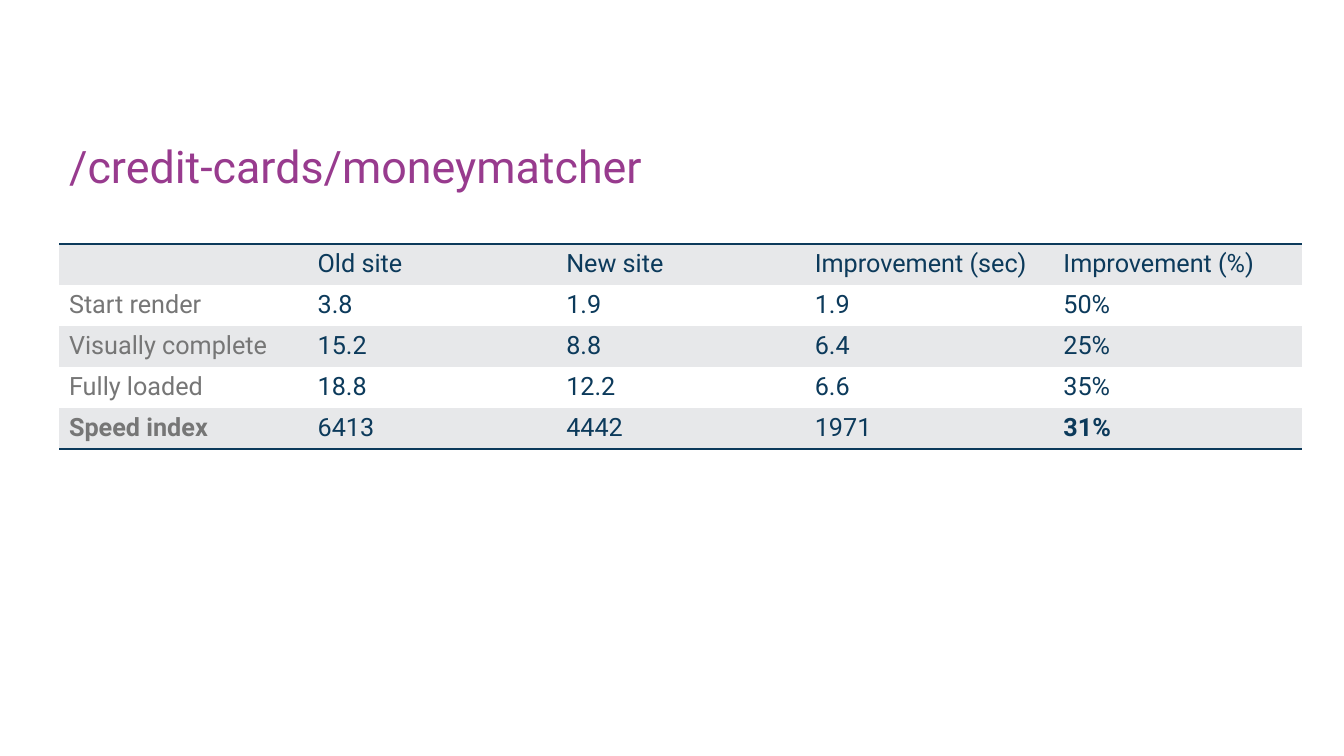
from dataclasses import dataclass

from lxml.etree import SubElement
from pptx import Presentation
from pptx.dml.color import RGBColor as Color
from pptx.enum.text import MSO_ANCHOR as Anchor, PP_ALIGN as Align
from pptx.oxml import parse_xml
from pptx.oxml.ns import nsdecls, qn
from pptx.slide import Slide
from pptx.table import Table, _Cell as Cell
from pptx.text.text import _Paragraph as Para
from pptx.util import Emu, Pt

SCALE = 914400 / 100.8
FONT = "Roboto"
PLAIN = "{2D5ABB26-0587-4C30-8999-92F81FD0307C}"
NAVY = Color(0x0C, 0x3A, 0x5B)
PURPLE = Color(0x98, 0x3B, 0x8E)
GREY = Color(0x76, 0x76, 0x76)
BAND = Color(0xE7, 0xE8, 0xEA)
WHITE = Color(0xFF, 0xFF, 0xFF)


@dataclass(frozen=True)
class Metric:
    label: str
    old: str
    new: str
    gain: str
    rate: str
    strong: bool = False

    def texts(self) -> list[str]:
        return [self.label, self.old, self.new, self.gain, self.rate]


METRICS = [
    Metric("", "Old site", "New site", "Improvement (sec)", "Improvement (%)"),
    Metric("Start render", "3.8", "1.9", "1.9", "50%"),
    Metric("Visually complete", "15.2", "8.8", "6.4", "25%"),
    Metric("Fully loaded", "18.8", "12.2", "6.6", "35%"),
    Metric("Speed index", "6413", "4442", "1971", "31%", True),
]


def px(count: int) -> Emu:
    return Emu(round(count * SCALE))


def style(para: Para, size: int, color: Color, bold: bool = False) -> None:
    for run in para.runs:
        font = run.font
        font.name, font.size, font.bold = FONT, Pt(size), bold
        font.color.rgb = color


def rule(cell: Cell, tag: str) -> None:
    line = parse_xml(f'<a:{tag} {nsdecls("a")} w="{Pt(2)}"/>')
    fill = SubElement(line, qn("a:solidFill"))
    SubElement(fill, qn("a:srgbClr"), val=str(NAVY))
    cell._tc.get_or_add_tcPr().insert(0, line)


def add_title(slide: Slide, text: str) -> None:
    title = slide.shapes.title
    title.left, title.top = px(59), px(126)
    title.width, title.height = px(1243), px(72)
    frame = title.text_frame
    frame.text = text
    frame.vertical_anchor = Anchor.BOTTOM
    para = frame.paragraphs[0]
    para.alignment = Align.LEFT
    para.line_spacing = 0.9
    style(para, 32, PURPLE)


def fill_row(table: Table, row: int, metric: Metric) -> None:
    texts = metric.texts()
    for col, text in enumerate(texts):
        cell = table.cell(row, col)
        cell.text = text
        cell.fill.solid()
        cell.fill.fore_color.rgb = WHITE if row % 2 else BAND
        edge = col in (0, len(texts) - 1)
        color = NAVY if col else GREY
        style(cell.text_frame.paragraphs[0], 18, color, metric.strong and edge)
        if row == 0:
            rule(cell, "lnT")
        if row == len(METRICS) - 1:
            rule(cell, "lnB")


def add_grid(slide: Slide) -> None:
    rows, cols = len(METRICS), len(METRICS[0].texts())
    frame = slide.shapes.add_table(
        rows, cols, px(59), px(244), px(1243), px(205)
    )
    table = frame.table
    table.first_row = table.horz_banding = False
    table._tbl.tblPr.find(qn("a:tableStyleId")).text = PLAIN
    for row, metric in enumerate(METRICS):
        fill_row(table, row, metric)


def main() -> None:
    deck = Presentation()
    deck.slide_width, deck.slide_height = px(1344), px(756)
    slide = deck.slides.add_slide(deck.slide_layouts[5])
    add_title(slide, "/credit-cards/moneymatcher")
    add_grid(slide)
    deck.save("out.pptx")


if __name__ == "__main__":
    main()
